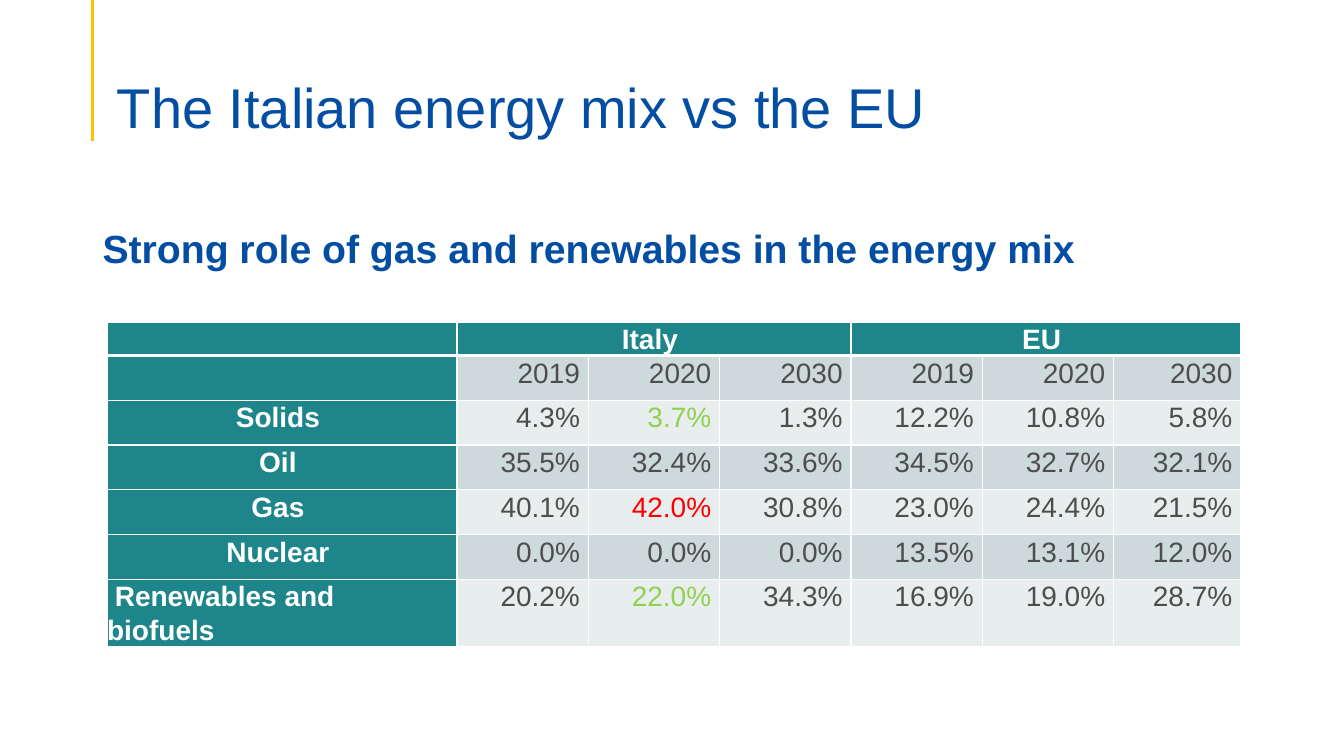
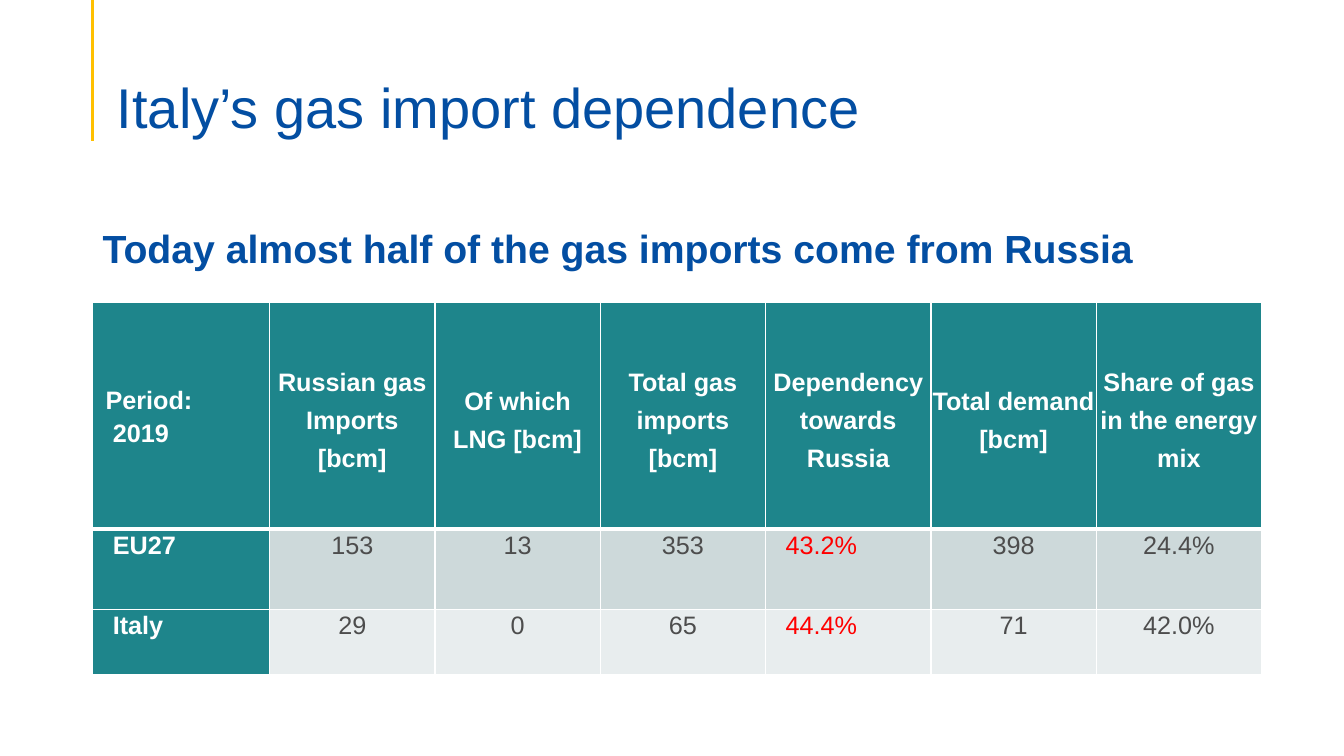
"""Build two slides on the Italian energy mix and gas import dependence."""
from lxml import etree
from pptx import Presentation
from pptx.dml.color import RGBColor
from pptx.enum import shapes, text
from pptx.oxml import ns
from pptx.util import Pt

BLUE = RGBColor(0x03, 0x4E, 0xA2)
YELLOW = RGBColor(0xFF, 0xC0, 0x00)
TEAL = RGBColor(0x1E, 0x85, 0x8B)
DARK_BAND = RGBColor(0xCD, 0xD9, 0xDA)
LIGHT_BAND = RGBColor(0xE8, 0xED, 0xEE)
WHITE = RGBColor(0xFF, 0xFF, 0xFF)
GREY = RGBColor(0x4D, 0x4D, 0x4D)
GREEN = RGBColor(0x92, 0xD0, 0x50)
RED = RGBColor(0xFF, 0x00, 0x00)
FONT = "Arial"
LEFT, CENTER, RIGHT = text.PP_ALIGN.LEFT, text.PP_ALIGN.CENTER, text.PP_ALIGN.RIGHT

deck = Presentation()
deck.slide_width, deck.slide_height = Pt(960), Pt(540)


def write(para, words, size, color, bold=False, align=LEFT, spacing=1.0, indent=0):
    """Put words into a paragraph and format it."""
    if indent:
        para._p.get_or_add_pPr().set("indent", str(Pt(indent)))
    para.text = words
    para.alignment = align
    para.line_spacing = spacing
    para.font.name = FONT
    para.font.size = Pt(size)
    para.font.bold = bold
    para.font.color.rgb = color


def add_page(title, headline, left, top, widths, heights, margins):
    """Add a slide with rule, title, headline and a coloured empty table; return the table."""
    page = deck.slides.add_slide(deck.slide_layouts[5])
    rule = page.shapes.add_connector(shapes.MSO_CONNECTOR.STRAIGHT, Pt(66.2), 0, Pt(66.2), Pt(101))
    rule.line.color.rgb = YELLOW
    rule.line.width = Pt(2.25)
    etree.SubElement(rule._element.spPr, ns.qn("a:effectLst"))

    heading = page.shapes.title
    heading.left, heading.top, heading.width, heading.height = Pt(76.3), Pt(38.2), Pt(828), Pt(62)
    subtitle = page.shapes.add_textbox(Pt(66.2), Pt(132.5), Pt(782), Pt(64.8))
    for box, words, size, bold, spacing in (
        (heading, title, 40, False, 0.9),
        (subtitle, headline, 28, True, 1.0),
    ):
        frame = box.text_frame
        frame.word_wrap = True
        frame.auto_size = text.MSO_AUTO_SIZE.NONE
        frame.vertical_anchor = text.MSO_ANCHOR.BOTTOM
        write(frame.paragraphs[0], words, size, BLUE, bold, spacing=spacing)
    heading.text_frame.margin_bottom = 0

    table = page.shapes.add_table(
        len(heights), len(widths), Pt(left), Pt(top), Pt(sum(widths)), Pt(sum(heights))
    ).table
    table.first_row = table.horz_banding = False
    for column, width in zip(table.columns, widths):
        column.width = Pt(width)
    for r, height in enumerate(heights):
        table.rows[r].height = Pt(height)
        for c in range(len(widths)):
            cell = table.cell(r, c)
            cell.margin_left, cell.margin_right = Pt(margins[0]), Pt(margins[1])
            cell.margin_top = cell.margin_bottom = 0
            for side in ("lnL", "lnR", "lnT", "lnB"):
                thick = (r, side) in ((0, "lnB"), (1, "lnT"))
                border = etree.SubElement(cell._tc.get_or_add_tcPr(), ns.qn("a:" + side))
                border.set("w", str(Pt(3 if thick else 1)))
                paint = etree.SubElement(border, ns.qn("a:solidFill"))
                etree.SubElement(paint, ns.qn("a:srgbClr")).set("val", str(WHITE))
            cell.fill.solid()
            if r == 0 or c == 0:
                cell.fill.fore_color.rgb = TEAL
            else:
                cell.fill.fore_color.rgb = DARK_BAND if r % 2 else LIGHT_BAND
    return table


mix_rows = [
    ["", "2019", "2020", "2030", "2019", "2020", "2030"],
    ["Solids", "4.3%", "3.7%", "1.3%", "12.2%", "10.8%", "5.8%"],
    ["Oil", "35.5%", "32.4%", "33.6%", "34.5%", "32.7%", "32.1%"],
    ["Gas", "40.1%", "42.0%", "30.8%", "23.0%", "24.4%", "21.5%"],
    ["Nuclear", "0.0%", "0.0%", "0.0%", "13.5%", "13.1%", "12.0%"],
    ["Renewables and biofuels", "20.2%", "22.0%", "34.3%", "16.9%", "19.0%", "28.7%"],
]
mix_highlights = {(2, 2): GREEN, (4, 2): RED, (6, 2): GREEN}
mix = add_page(
    "The Italian energy mix vs the EU",
    "Strong role of gas and renewables in the energy mix",
    76.5, 230, [250] + [93.8] * 5 + [90.8], [22] + [32] * 6, (0, 6),
)
for c, region in ((1, "Italy"), (4, "EU")):
    mix.cell(0, c).merge(mix.cell(0, c + 2))
    write(mix.cell(0, c).text_frame.paragraphs[0], region, 20, WHITE, True, CENTER, 1.07)
for r, row in enumerate(mix_rows, 1):
    for c, words in enumerate(row):
        para = mix.cell(r, c).text_frame.paragraphs[0]
        if c:
            write(para, words, 20, mix_highlights.get((r, c), GREY), False, RIGHT, 1.07)
        elif r == len(mix_rows):
            write(para, words, 20, WHITE, True, LEFT, 1.07, indent=5.5)
        elif words:
            write(para, words, 20, WHITE, True, CENTER, 1.07)

import_heads = [
    "Russian gas Imports [bcm]",
    "Of which LNG [bcm]",
    "Total gas imports [bcm]",
    "Dependency towards Russia",
    "Total demand [bcm]",
    "Share of gas in the energy mix",
]
import_rows = [
    ["EU27", "153", "13", "353", "43.2%", "398", "24.4%"],
    ["Italy", "29", "0", "65", "44.4%", "71", "42.0%"],
]
dependency_column = 4
imports = add_page(
    "Italy’s gas import dependence",
    "Today almost half of the gas imports come from Russia",
    66.2, 216, [126.4] + [118.1] * 6, [162, 57.6, 46], (0.7, 0.7),
)
for c in range(7):
    imports.cell(0, c).vertical_anchor = text.MSO_ANCHOR.MIDDLE
period = imports.cell(0, 0).text_frame
write(period.paragraphs[0], "Period:", 18, WHITE, True, LEFT, 1.07, indent=8.6)
period.paragraphs[0].space_after = Pt(2)
write(period.add_paragraph(), "2019", 18, WHITE, True, LEFT, 1.07, indent=13.7)
for c, words in enumerate(import_heads, 1):
    write(imports.cell(0, c).text_frame.paragraphs[0], words, 18, WHITE, True, CENTER, 1.35)
for r, row in enumerate(import_rows, 1):
    for c, words in enumerate(row):
        para = imports.cell(r, c).text_frame.paragraphs[0]
        if c == 0:
            write(para, words, 18, WHITE, True, LEFT, 1.07, indent=13.7)
        elif c == dependency_column:
            write(para, words, 18, RED, False, LEFT, 1.07, indent=13.7)
        else:
            write(para, words, 18, GREY, False, CENTER, 1.07)

deck.save("out.pptx")
